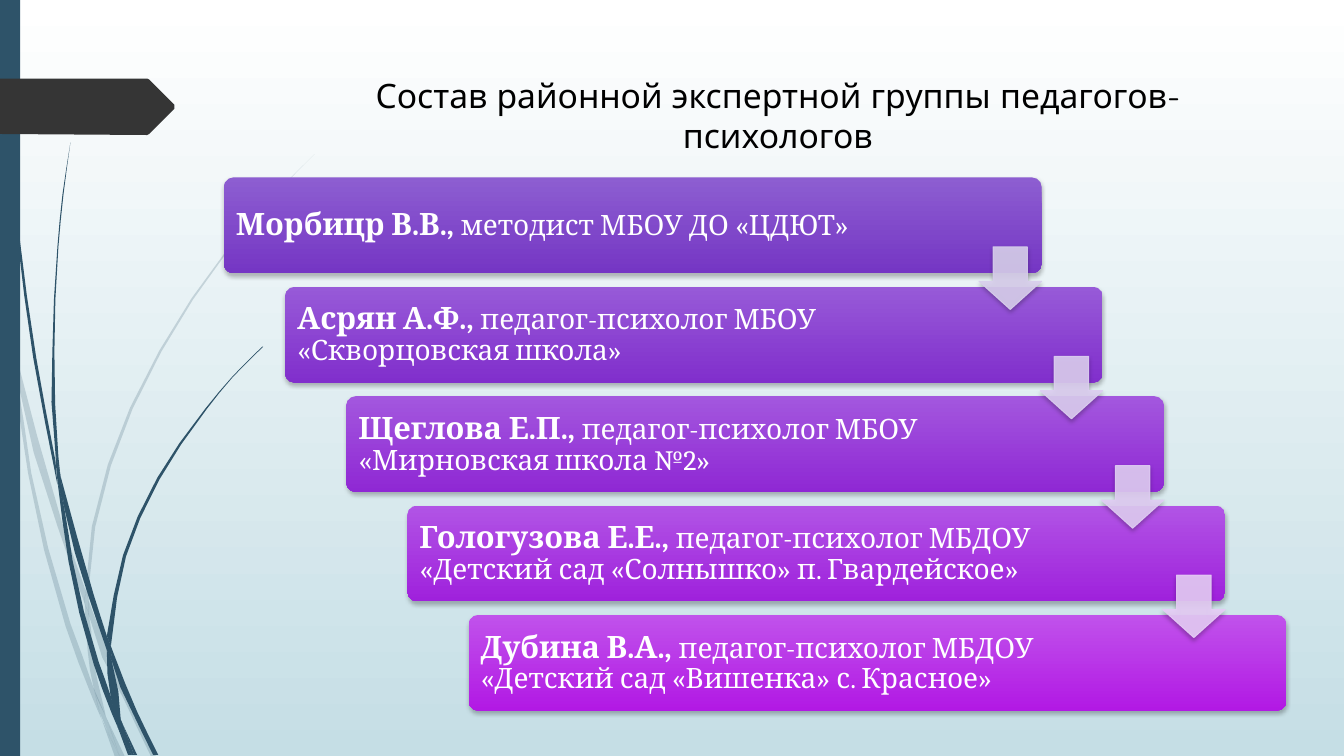
from lxml import etree
from pptx import Presentation
from pptx.dml.color import RGBColor
from pptx.enum.shapes import MSO_SHAPE
from pptx.enum.text import MSO_ANCHOR, MSO_AUTO_SIZE, PP_ALIGN
from pptx.oxml.ns import qn
from pptx.util import Inches, Pt

RECTANGLE = MSO_SHAPE.RECTANGLE
ROUNDED = MSO_SHAPE.ROUNDED_RECTANGLE
DOWN_ARROW = MSO_SHAPE.DOWN_ARROW
MIDDLE = MSO_ANCHOR.MIDDLE
NO_AUTOFIT = MSO_AUTO_SIZE.NONE
CENTER = PP_ALIGN.CENTER

WHITE = RGBColor(0xFF, 0xFF, 0xFF)
BLACK = RGBColor(0, 0, 0)
PALE_BLUE = RGBColor(0xC5, 0xDE, 0xE5)
DEEP_BLUE = RGBColor(0x2E, 0x53, 0x69)
CHARCOAL = RGBColor(0x35, 0x35, 0x35)

TITLE = "Состав районной экспертной группы педагогов-психологов"
EXPERTS = [
    ("Морбицр В.В.,", "методист МБОУ ДО «ЦДЮТ»",
     RGBColor(0x8D, 0x5E, 0xD1), RGBColor(0x75, 0x36, 0xC4)),
    ("Асрян А.Ф.,", "педагог-психолог МБОУ «Скворцовская школа»",
     RGBColor(0x97, 0x5A, 0xD8), RGBColor(0x81, 0x2F, 0xCC)),
    ("Щеглова Е.П.,", "педагог-психолог МБОУ «Мирновская школа №2»",
     RGBColor(0xA3, 0x57, 0xDE), RGBColor(0x8F, 0x28, 0xD4)),
    ("Гологузова Е.Е.,", "педагог-психолог МБДОУ «Детский сад «Солнышко» п. Гвардейское»",
     RGBColor(0xB1, 0x54, 0xE5), RGBColor(0x9F, 0x21, 0xDC)),
    ("Дубина В.А.,", "педагог-психолог МБДОУ «Детский сад «Вишенка» с. Красное»",
     RGBColor(0xC0, 0x52, 0xEB), RGBColor(0xB2, 0x19, 0xE4)),
]
ARROW_COLORS = [RGBColor(0xD8, 0xCF, 0xEC), RGBColor(0xDC, 0xCE, 0xF0),
                RGBColor(0xE0, 0xCD, 0xF3), RGBColor(0xE6, 0xCD, 0xF6)]
STEP_X, STEP_Y = 0.607, 1.085
POINTER = [(-0.01, 0.78), (1.46, 0.78), (1.48, 0.79), (1.73, 1.04),
           (1.73, 1.08), (1.48, 1.33), (1.46, 1.34), (-0.01, 1.33)]

PALE_BLADES = [
    ([(0, 2.82), (0, 2.99), (0.1, 3.44), (0.11, 3.5)], [(0, 2.82), (0.08, 3.22), (0.11, 3.5)]),
    ([(0.14, 3.45), (0.17, 3.76), (0.57, 5.22), (0.84, 5.99)],
     [(0.14, 3.45), (0.62, 5.2), (0.85, 5.86)]),
    ([(0.88, 5.96), (0.88, 6.1), (1.23, 6.94), (1.5, 7.51)],
     [(0.88, 5.96), (0.92, 6.07), (1.27, 6.92), (1.55, 7.51)]),
    ([(1.05, 7.11), (1.19, 7.51)], [(1.05, 7.11), (1.24, 7.51)]),
    ([(0.11, 3.5), (0.28, 4.7), (0.65, 6.21), (0.92, 6.93), (1.01, 7.14)],
     [(0.11, 3.5), (0.17, 3.76), (0.31, 4.69), (0.7, 6.19), (0.93, 6.83), (0.99, 7.07)]),
    ([(0.84, 5.99), (0.87, 6.46), (0.93, 6.83), (0.96, 6.92), (1.05, 7.11)],
     [(0.84, 5.99), (0.88, 6.08), (0.91, 6.46), (1.04, 7.06)]),
    ([(3.12, 1.53), (2.68, 1.97), (2.28, 2.44), (1.58, 3.48), (1.07, 4.61), (0.85, 5.84),
      (0.85, 5.86)],
     [(3.12, 1.53), (2.68, 1.98), (2.29, 2.45), (1.6, 3.49), (1.1, 4.62), (0.88, 5.84),
      (0.88, 5.96)]),
    ([(1.01, 7.14), (1.14, 7.51)], [(1.01, 7.14), (1.19, 7.51)]),
    ([(0.85, 5.86), (0.84, 5.99), (0.88, 6.08)], [(0.85, 5.86), (0.88, 5.96), (0.88, 6.1)]),
    ([(0.93, 6.83), (0.99, 7.07), (1.19, 7.51)], [(0.93, 6.83), (1.05, 7.11), (1.19, 7.51)]),
]
DARK_BLADES = [
    ([(0.03, 0), (0.03, 0.48), (0.07, 1.1), (0.17, 2.33), (0.33, 3.55), (0.57, 4.81)],
     [(0.03, 0), (0.05, 0.48), (0.08, 1.09), (0.19, 2.32), (0.36, 3.55), (0.55, 4.57)]),
    ([(0.6, 4.72), (0.64, 5.05), (0.88, 5.92), (1.06, 6.45)],
     [(0.6, 4.72), (0.93, 5.9), (1.06, 6.31)]),
    ([(1.1, 6.41), (1.11, 6.56), (1.32, 7.08), (1.52, 7.49)],
     [(1.1, 6.41), (1.13, 6.49), (1.36, 7.06), (1.57, 7.49)]),
    ([(0.57, 4.77), (0.68, 5.57), (0.93, 6.59), (1.11, 7.08), (1.17, 7.22)],
     [(0.57, 4.77), (0.64, 5.05), (0.72, 5.56), (0.98, 6.57), (1.1, 6.91), (1.16, 7.17)]),
    ([(0.7, 1.41), (0.62, 1.93), (0.57, 2.45), (0.52, 3.49), (0.55, 4.49), (0.6, 4.72)],
     [(0.7, 1.41), (0.63, 1.93), (0.58, 2.45), (0.54, 3.49), (0.58, 4.53), (0.6, 4.72)]),
    ([(1.22, 7.19), (1.33, 7.49)], [(1.22, 7.19), (1.36, 7.49)]),
    ([(0.55, 4.49), (0.57, 4.77), (0.64, 5.05)], [(0.55, 4.49), (0.6, 4.72), (0.64, 5.05)]),
    ([(2.6, 3.44), (2.31, 3.73), (2.04, 4.05), (1.56, 4.74), (1.22, 5.51), (1.06, 6.31)],
     [(2.61, 3.44), (2.31, 3.74), (2.05, 4.06), (1.58, 4.76), (1.25, 5.52), (1.11, 6.33),
      (1.1, 6.41)]),
    ([(1.17, 7.22), (1.27, 7.49)], [(1.17, 7.22), (1.31, 7.49)]),
    ([(1.06, 6.45), (1.1, 6.92), (1.22, 7.19)], [(1.06, 6.45), (1.11, 6.56), (1.2, 7.16)]),
    ([(1.06, 6.31), (1.06, 6.45), (1.11, 6.56)], [(1.06, 6.31), (1.1, 6.41), (1.11, 6.56)]),
    ([(1.1, 6.91), (1.17, 7.22), (1.31, 7.49)], [(1.1, 6.91), (1.22, 7.19), (1.33, 7.49)]),
]


def smooth_edge(points):
    heights = [after[1] - before[1] for before, after in zip(points, points[1:])]
    chords = [(after[0] - before[0]) / height
              for before, after, height in zip(points, points[1:], heights)]
    inner = [(chords[i] * heights[i + 1] + chords[i + 1] * heights[i])
             / (heights[i] + heights[i + 1]) for i in range(len(chords) - 1)]
    slopes = [chords[0], *inner, chords[-1]]
    edge = [points[0]]
    for i, height in enumerate(heights):
        (x1, y1), (x2, y2) = points[i:i + 2]
        bulge = height * (slopes[i] - slopes[i + 1]) / 8
        edge += [((x1 + x2) / 2 + bulge, (y1 + y2) / 2), (x2, y2)]
    return edge


class SlideBuilder:
    title_font = "Quicksand"
    body_font = "Cambria"

    def __init__(self, presentation):
        self.slide = presentation.slides.add_slide(presentation.slide_layouts[5])

    def gradient(self, fill, top, bottom):
        fill.gradient()
        fill.gradient_angle = 270
        for stop, color in zip(fill.gradient_stops, (top, bottom)):
            stop.color.rgb = color

    def solid(self, shape, color):
        shape.shadow.inherit = False
        shape.fill.solid()
        shape.fill.fore_color.rgb = color
        shape.line.fill.background()

    def fade(self, shape, percent):
        for color in shape._element.spPr.iter(qn("a:srgbClr")):
            etree.SubElement(color, qn("a:alpha"), val=str(percent * 1000))

    def drop_shadow(self, shape):
        shape.shadow.inherit = False
        effects = shape._element.spPr.find(qn("a:effectLst"))
        shadow = etree.SubElement(effects, qn("a:outerShdw"), blurRad=str(Pt(3)),
                                  dist=str(Pt(2)), dir="5400000", rotWithShape="0")
        color = etree.SubElement(shadow, qn("a:srgbClr"), val="000000")
        etree.SubElement(color, qn("a:alpha"), val="25000")

    def preset(self, kind, *box):
        return self.slide.shapes.add_shape(kind, *map(Inches, box))

    def style_run(self, run, font, size, color, bold=False):
        run.font.name, run.font.size, run.font.bold = font, Pt(size), bold
        run.font.color.rgb = color

    def title(self, text):
        shape = self.slide.shapes.title
        shape.left, shape.top = Inches(2.84), Inches(0.68)
        shape.width, shape.height = Inches(9.75), Inches(0.92)
        frame = shape.text_frame
        frame.text = text
        frame.word_wrap, frame.auto_size = True, NO_AUTOFIT
        frame.vertical_anchor = MIDDLE
        frame.paragraphs[0].alignment = CENTER
        frame.paragraphs[0].line_spacing = 1.0
        self.style_run(frame.paragraphs[0].runs[0], self.title_font, 24, BLACK)

    def outline(self, points, color):
        corners = [(Inches(x), Inches(y)) for x, y in points]
        builder = self.slide.shapes.build_freeform(*corners[0])
        builder.add_line_segments(corners[1:], close=True)
        shape = builder.convert_to_shape()
        self.solid(shape, color)
        return shape

    def card(self, left, top, name, role, light, dark):
        shape = self.preset(ROUNDED, left, top, 8.11, 0.95)
        shape.adjustments[0] = 0.1
        self.gradient(shape.fill, light, dark)
        shape.line.fill.background()
        self.drop_shadow(shape)
        box = map(Inches, (left + 0.03, top + 0.03, 6.83, 0.9))
        frame = self.slide.shapes.add_textbox(*box).text_frame
        frame.word_wrap, frame.vertical_anchor = True, MIDDLE
        frame.margin_left = frame.margin_right = Inches(0.09)
        frame.margin_top = frame.margin_bottom = Inches(0.09)
        paragraph = frame.paragraphs[0]
        paragraph.line_spacing = 0.9
        for text, size, bold in ((name + " ", 22, True), (role, 20, False)):
            run = paragraph.add_run()
            run.text = text
            self.style_run(run, self.body_font, size, WHITE, bold)

    def arrow(self, left, top, color):
        shape = self.preset(DOWN_ARROW, left, top, 0.62, 0.62)
        shape.adjustments[0], shape.adjustments[1] = 0.55, 0.45
        self.solid(shape, color)
        shape.line.color.rgb, shape.line.width = color, Pt(0.75)
        self.fade(shape, 90)
        self.drop_shadow(shape)


def main():
    presentation = Presentation()
    presentation.slide_width, presentation.slide_height = Inches(13.33), Inches(7.5)
    builder = SlideBuilder(presentation)
    builder.gradient(builder.slide.background.fill, WHITE, PALE_BLUE)
    for blades, opacity in ((PALE_BLADES, 20), (DARK_BLADES, 100)):
        for left, right in blades:
            points = smooth_edge(left) + smooth_edge(right)[::-1]
            builder.fade(builder.outline(points, DEEP_BLUE), opacity)
    builder.solid(builder.preset(RECTANGLE, 0, 0, 0.2, 7.5), DEEP_BLUE)
    builder.outline(POINTER, CHARCOAL)
    builder.title(TITLE)
    for index, expert in enumerate(EXPERTS):
        builder.card(2.22 + index * STEP_X, 1.76 + index * STEP_Y, *expert)
    for index, color in enumerate(ARROW_COLORS):
        builder.arrow(9.71 + index * STEP_X, 2.45 + index * STEP_Y, color)
    presentation.save("out.pptx")


if __name__ == "__main__":
    main()
